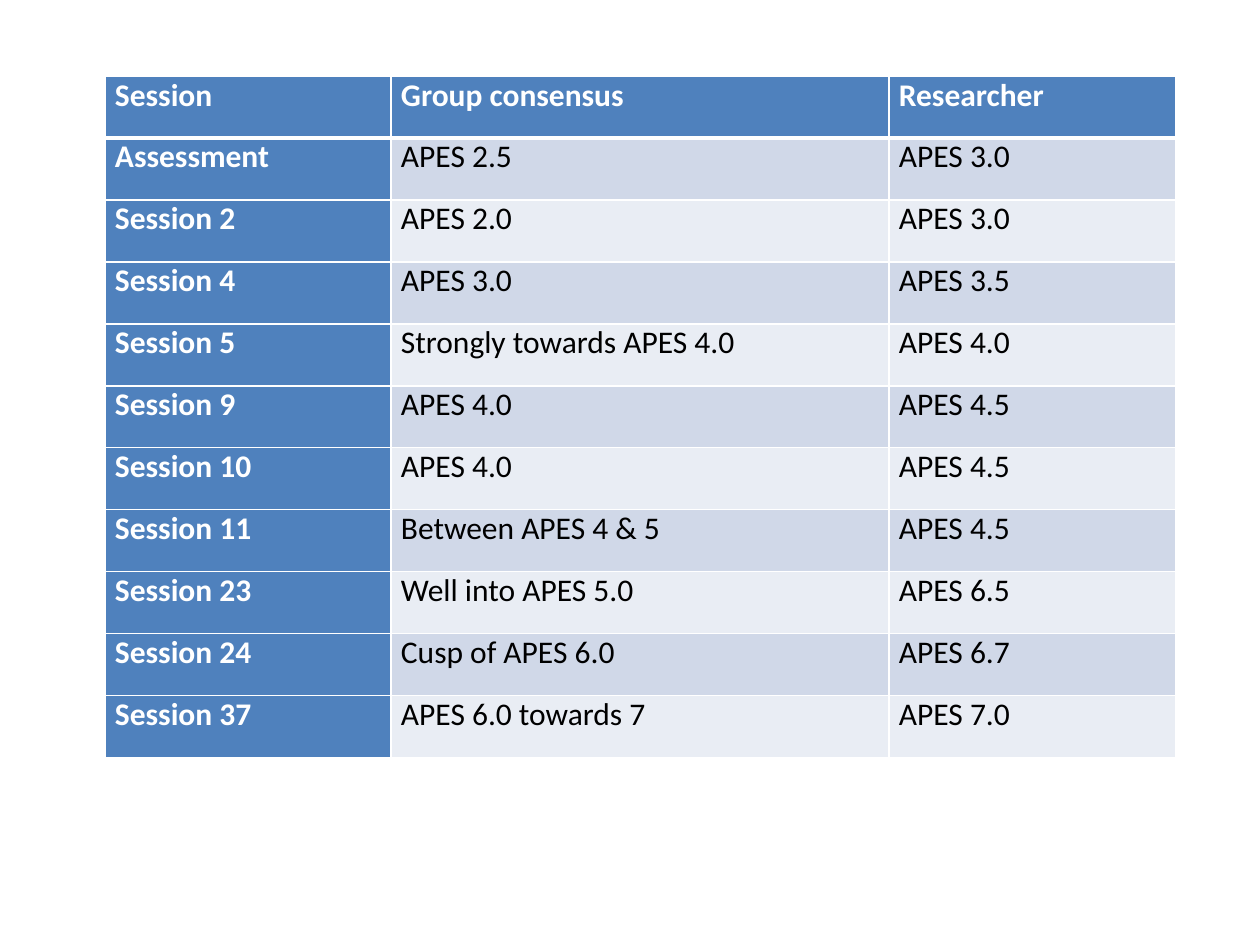
from dataclasses import dataclass

from lxml import etree
from pptx import Presentation
from pptx.dml.color import RGBColor
from pptx.enum.text import MSO_ANCHOR
from pptx.oxml.ns import qn
from pptx.util import Pt

EMU_PER_PX = 914400 // 126
TOP = MSO_ANCHOR.TOP
BLANK_LAYOUT = 6

SLIDE_WIDTH, SLIDE_HEIGHT = 1260, 945
TABLE_LEFT, TABLE_TOP = 105, 76
COLUMN_WIDTHS = (286, 498, 287)
ROW_HEIGHT = 62
CELL_INSET = 9
FIRST_LINE_INDENT = 1

RATINGS = (
    ("Session", "Group consensus", "Researcher"),
    ("Assessment", "APES 2.5", "APES 3.0"),
    ("Session 2", "APES 2.0", "APES 3.0"),
    ("Session 4", "APES 3.0", "APES 3.5"),
    ("Session 5", "Strongly towards APES 4.0", "APES 4.0"),
    ("Session 9", "APES 4.0", "APES 4.5"),
    ("Session 10", "APES 4.0", "APES 4.5"),
    ("Session 11", "Between APES 4 & 5", "APES 4.5"),
    ("Session 23", "Well into APES 5.0", "APES 6.5"),
    ("Session 24", "Cusp of APES 6.0", "APES 6.7"),
    ("Session 37", "APES 6.0 towards 7", "APES 7.0"),
)


@dataclass(frozen=True)
class Theme:
    font: str = "Calibri"
    text_size: int = 18
    heading_fill: str = "4F81BD"
    heading_text: str = "FFFFFF"
    body_text: str = "000000"
    bands: tuple = ("D0D8E8", "E9EDF4")
    border: str = "FFFFFF"
    thin: int = 1
    thick: int = 3


THEME = Theme()


def px(length):
    return length * EMU_PER_PX


def set_attributes(target, values):
    for name, value in values.items():
        setattr(target, name, value)


def set_borders(cell, widths):
    """Draw the sides in widths (points); they must precede the cell's fill."""
    properties = cell._tc.get_or_add_tcPr()
    for position, side in enumerate(("L", "R", "T", "B")):
        line = etree.Element(qn(f"a:ln{side}"), w=str(Pt(widths[side])))
        fill = etree.SubElement(line, qn("a:solidFill"))
        etree.SubElement(fill, qn("a:srgbClr"), val=THEME.border)
        properties.insert(position, line)


def write_cell(cell, text, color, bold):
    set_attributes(cell, {
        "text": text,
        "vertical_anchor": TOP,
        "margin_left": px(CELL_INSET),
        "margin_right": px(CELL_INSET),
        "margin_top": 0,
        "margin_bottom": 0,
    })
    paragraph = cell.text_frame.paragraphs[0]
    paragraph._p.get_or_add_pPr().set("indent", str(px(FIRST_LINE_INDENT)))
    font = paragraph.runs[0].font
    set_attributes(font, {
        "name": THEME.font, "size": Pt(THEME.text_size), "bold": bold,
    })
    font.color.rgb = RGBColor.from_string(color)


def style_cell(cell, text, row, column):
    is_heading = row == 0 or column == 0
    band = THEME.bands[(row - 1) % len(THEME.bands)]
    write_cell(cell, text,
               THEME.heading_text if is_heading else THEME.body_text,
               is_heading)
    cell.fill.solid()
    cell.fill.fore_color.rgb = RGBColor.from_string(
        THEME.heading_fill if is_heading else band)
    set_borders(cell, {
        "L": THEME.thin,
        "R": THEME.thin,
        "T": THEME.thick if row == 1 else THEME.thin,
        "B": THEME.thick if row == 0 else THEME.thin,
    })


def add_ratings_table(slide):
    table = slide.shapes.add_table(
        len(RATINGS), len(COLUMN_WIDTHS), px(TABLE_LEFT), px(TABLE_TOP),
        px(sum(COLUMN_WIDTHS)), px(ROW_HEIGHT * len(RATINGS))).table
    table.first_col = True
    for column, width in zip(table.columns, COLUMN_WIDTHS):
        column.width = px(width)
    for row, ratings in enumerate(RATINGS):
        table.rows[row].height = px(ROW_HEIGHT)
        for column, text in enumerate(ratings):
            style_cell(table.cell(row, column), text, row, column)


def main():
    presentation = Presentation()
    set_attributes(presentation, {
        "slide_width": px(SLIDE_WIDTH), "slide_height": px(SLIDE_HEIGHT),
    })
    slide = presentation.slides.add_slide(
        presentation.slide_layouts[BLANK_LAYOUT])
    add_ratings_table(slide)
    presentation.save("out.pptx")


if __name__ == "__main__":
    main()
